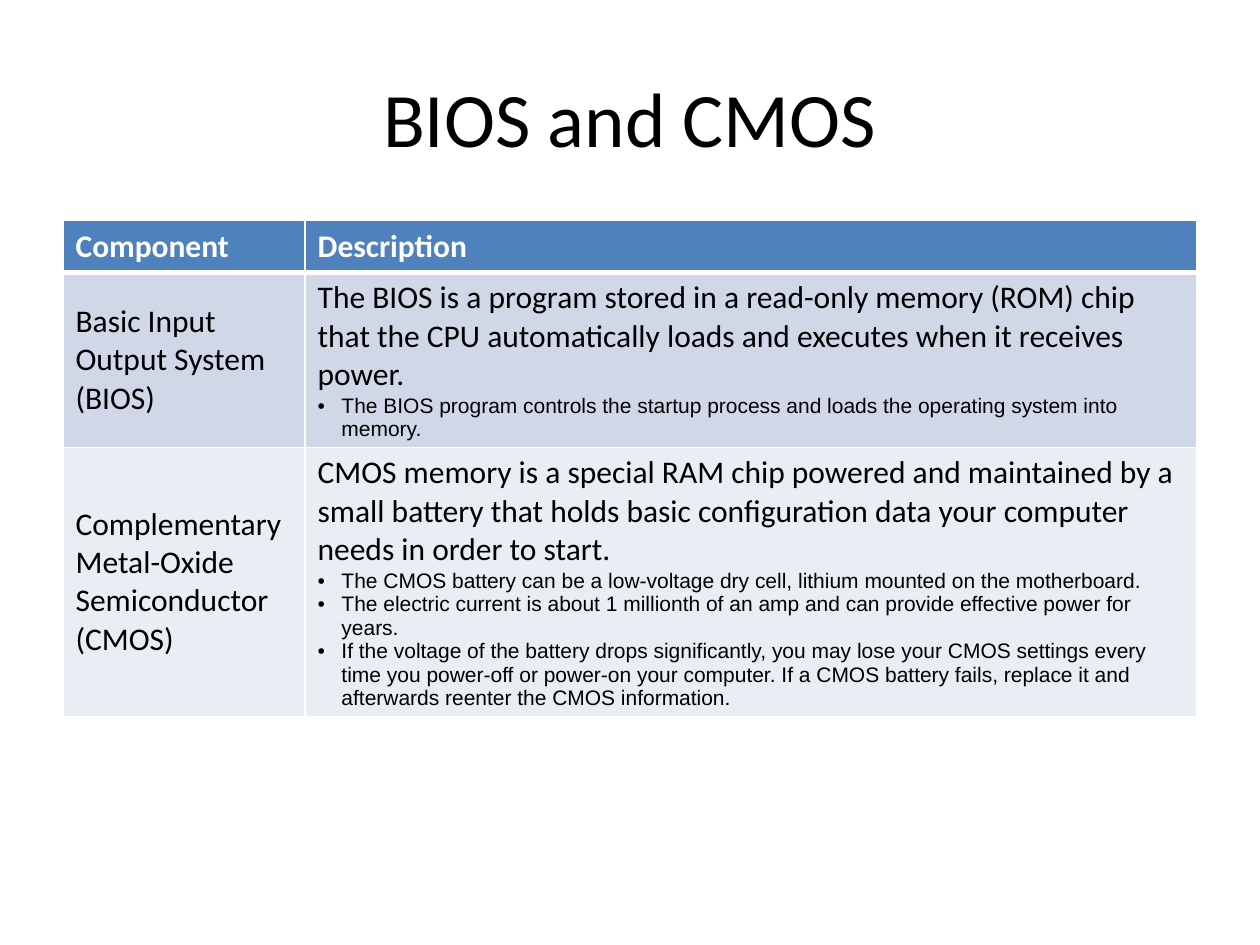
from lxml import etree
from pptx import Presentation
from pptx.dml.color import RGBColor
from pptx.enum.text import MSO_ANCHOR, PP_ALIGN
from pptx.oxml.ns import qn
from pptx.util import Cm, Pt

MIDDLE = MSO_ANCHOR.MIDDLE
CENTER = PP_ALIGN.CENTER
TITLE_ONLY = 5

HEADING = {"name": "Calibri", "size": Pt(18), "bold": True}
BODY = {"name": "Calibri", "size": Pt(18), "bold": False}
BULLET = {"name": "Arial", "size": Pt(12), "bold": False}
TITLE = {"name": "Calibri", "size": Pt(44), "bold": False}

# Each cell lists its lead text, then its bullets
ROWS = [
    [["Component"], ["Description"]],
    [
        ["Basic Input Output System (BIOS)"],
        [
            "The BIOS is a program stored in a read-only memory (ROM) chip that the CPU "
            "automatically loads and executes when it receives power.",
            "The BIOS program controls the startup process and loads the operating system "
            "into memory.",
        ],
    ],
    [
        ["Complementary Metal-Oxide Semiconductor (CMOS)"],
        [
            "CMOS memory is a special RAM chip powered and maintained by a small battery "
            "that holds basic configuration data your computer needs in order to start.",
            "The CMOS battery can be a low-voltage dry cell, lithium mounted on the "
            "motherboard.",
            "The electric current is about 1 millionth of an amp and can provide effective "
            "power for years.",
            "If the voltage of the battery drops significantly, you may lose your CMOS "
            "settings every time you power-off or power-on your computer. If a CMOS battery "
            "fails, replace it and afterwards reenter the CMOS information.",
        ],
    ],
]
FILLS = ["4F81BD", "D0D8E8", "E9EDF4"]


def add_text(p, text, fmt, color):
    r = p.add_run()
    r.text = text
    for key, value in fmt.items():
        setattr(r.font, key, value)
    r.font.color.rgb = RGBColor.from_string(color)


def add_border(cell, side, width, color):
    ln = etree.SubElement(cell._tc.get_or_add_tcPr(), qn(f"a:ln{side}"), w=str(Pt(width)))
    fill = etree.SubElement(ln, qn("a:solidFill"))
    etree.SubElement(fill, qn("a:srgbClr"), val=color)


prs = Presentation()
prs.slide_width, prs.slide_height = Cm(25.4), Cm(19.05)
s = prs.slides.add_slide(prs.slide_layouts[TITLE_ONLY])

# Title
title = s.shapes.title
title.left, title.top, title.width, title.height = Cm(1.27), Cm(0.76), Cm(22.86), Cm(3.18)
tf = title.text_frame
tf.vertical_anchor = MIDDLE
p = tf.paragraphs[0]
p.alignment = CENTER
add_text(p, "BIOS and CMOS", TITLE, "000000")

# Table
table = s.shapes.add_table(3, 2, Cm(1.27), Cm(4.45), Cm(22.86), Cm(3.12)).table
for column, width in zip(table.columns, (4.88, 17.98)):
    column.width = Cm(width)

for i, (row, fill) in enumerate(zip(ROWS, FILLS)):
    table.rows[i].height = Cm(1.04)
    for j, texts in enumerate(row):
        cell = table.cell(i, j)
        cell.vertical_anchor = MIDDLE

        # A thick line parts the header from the body
        top, bottom = (3 if i == 1 else 1), (3 if i == 0 else 1)
        for side, width in {"L": 1, "R": 1, "T": top, "B": bottom}.items():
            add_border(cell, side, width, "FFFFFF")
        cell.fill.solid()
        cell.fill.fore_color.rgb = RGBColor.from_string(fill)

        # Lead text
        tf = cell.text_frame
        if i == 0:
            add_text(tf.paragraphs[0], texts[0], HEADING, "FFFFFF")
        else:
            add_text(tf.paragraphs[0], texts[0], BODY, "000000")

        # Bullets
        for text in texts[1:]:
            p = tf.add_paragraph()
            pPr = p._p.get_or_add_pPr()
            pPr.set("marL", str(Cm(0.48)))
            pPr.set("indent", str(-Cm(0.48)))
            etree.SubElement(pPr, qn("a:buFont"), typeface="Arial")
            etree.SubElement(pPr, qn("a:buChar"), char="•")
            add_text(p, text, BULLET, "000000")

prs.save("out.pptx")
